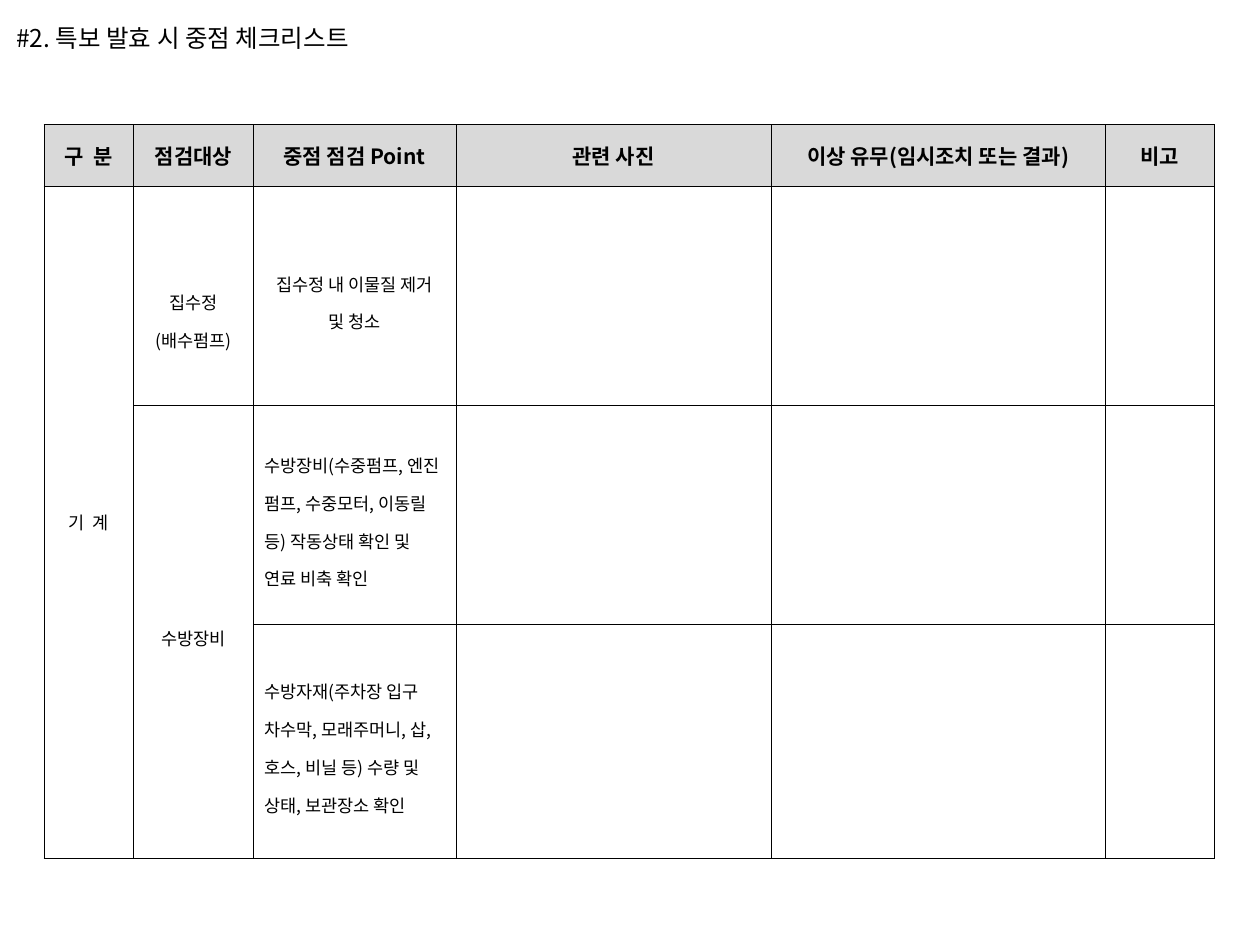
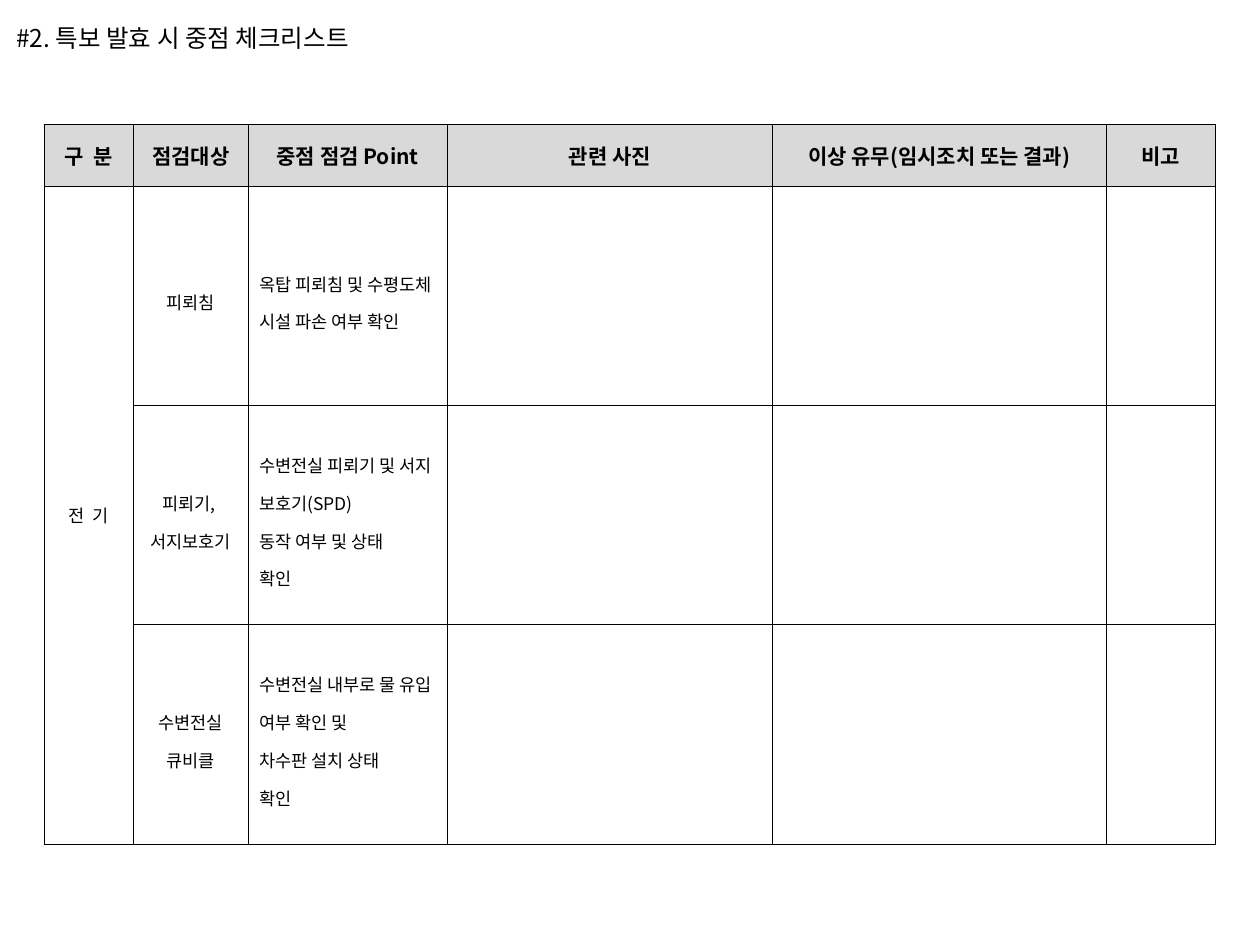
from lxml import etree
from pptx import Presentation
from pptx import util as u
from pptx.dml.color import RGBColor
from pptx.enum import text
from pptx.oxml import ns

FONT = "Noto Sans CJK KR"
BLACK, HEADER_GREY = "000000", "D9D9D9"
LEFT, CENTER = text.PP_ALIGN.LEFT, text.PP_ALIGN.CENTER

TITLE = "#2. 특보 발효 시 중점 체크리스트"
TITLE_BOX = (0.03, 0.13, 5.88, 0.34)
HEADINGS = ("구  분", "점검대상", "중점 점검 Point", "관련 사진",
            "이상 유무(임시조치 또는 결과)", "비고")
TABLE_LEFT, TABLE_TOP = 0.35, 0.99
HEADER_HEIGHT = 0.49
MARGIN_X, MARGIN_Y = 0.09, 0.05
BLANK_LINE = 0.3

# Rows hold category, target and check point; None continues the cell above.
# In a cell, \v breaks a line and \n starts a paragraph.
CHECKLISTS = [
    {
        "columns": (0.71, 0.95, 1.61, 2.5, 2.65, 0.87),
        "heights": (1.74, 1.74, 1.85),
        "rows": [
            ("기  계", "집수정\v(배수펌프)", "집수정 내 이물질 제거\v및 청소"),
            (None, "수방장비",
             "수방장비(수중펌프, 엔진 펌프, 수중모터, 이동릴 등) 작동상태 확인 및 연료 비축 확인"),
            (None, None,
             "수방자재(주차장 입구\v차수막, 모래주머니, 삽, 호스, 비닐 등) 수량 및 상태, 보관장소 확인"),
        ],
        "centered_points": {1},
        "lowered_targets": {1},
    },
    {
        "columns": (0.71, 0.91, 1.58, 2.58, 2.65, 0.87),
        "heights": (1.74, 1.74, 1.74),
        "rows": [
            ("전  기", "피뢰침", "옥탑 피뢰침 및 수평도체  시설 파손 여부 확인"),
            (None, "피뢰기, \v서지보호기",
             "수변전실 피뢰기 및 서지 보호기(SPD)\n동작 여부 및 상태\n확인"),
            (None, "수변전실\v큐비클",
             "수변전실 내부로 물 유입 여부 확인 및\n차수판 설치 상태\n확인"),
        ],
        "centered_points": set(),
        "lowered_targets": set(),
    },
]


def color(value):
    return RGBColor.from_string(value)


def write(frame, words, size, bold=False, align=LEFT, spacing=None):
    frame.text = words
    for para in frame.paragraphs:
        para.alignment = align
        para.line_spacing = spacing
        for span in para.runs:
            span.font.name = FONT
            span.font.size = u.Pt(size)
            span.font.bold = bold
            span.font.color.rgb = color(BLACK)
            east_asian = etree.SubElement(span.font._element, ns.qn("a:ea"))
            east_asian.set("typeface", FONT)


def add_borders(cell):
    properties = cell._tc.get_or_add_tcPr()
    for place, side in enumerate("LRTB"):
        line = etree.Element(ns.qn(f"a:ln{side}"), w=str(u.Pt(0.5)))
        fill = etree.SubElement(line, ns.qn("a:solidFill"))
        etree.SubElement(fill, ns.qn("a:srgbClr"), val=BLACK)
        properties.insert(place, line)


def style_cell(cell, is_header):
    cell.vertical_anchor = text.MSO_ANCHOR.MIDDLE
    cell.margin_left = cell.margin_right = u.Inches(MARGIN_X)
    cell.margin_top = cell.margin_bottom = u.Inches(MARGIN_Y)
    if is_header:
        cell.fill.solid()
        cell.fill.fore_color.rgb = color(HEADER_GREY)
    else:
        cell.fill.background()
    add_borders(cell)


def merge_down(table, rows):
    """Join each cell with the None cells that follow it in its column."""
    for column, entries in enumerate(zip(*rows)):
        starts = [row for row, words in enumerate(entries, 1) if words is not None]
        ends = [start - 1 for start in starts[1:]] + [len(rows)]
        for start, end in zip(starts, ends):
            if end > start:
                table.cell(start, column).merge(table.cell(end, column))


def add_title(page):
    box = page.shapes.add_textbox(*map(u.Inches, TITLE_BOX))
    box.text_frame.word_wrap = True
    box.text_frame.auto_size = text.MSO_AUTO_SIZE.SHAPE_TO_FIT_TEXT
    write(box.text_frame, TITLE, 14)


def add_checklist(page, checklist):
    widths, rows = checklist["columns"], checklist["rows"]
    heights = (HEADER_HEIGHT, *checklist["heights"])
    area = (TABLE_LEFT, TABLE_TOP, sum(widths), sum(heights))
    table = page.shapes.add_table(
        len(heights), len(widths), *map(u.Inches, area)).table
    table.first_row = table.horz_banding = False
    for column, width in zip(table.columns, widths):
        column.width = u.Inches(width)
    for row, height in zip(table.rows, heights):
        row.height = u.Inches(height)
    for row in range(len(heights)):
        for column in range(len(widths)):
            style_cell(table.cell(row, column), row == 0)

    for column, heading in enumerate(HEADINGS):
        write(table.cell(0, column).text_frame, heading, 12, True, CENTER)
    for row, entries in enumerate(rows, 1):
        for column, words in enumerate(entries):
            if words is None:
                continue
            is_point = column == 2 and row not in checklist["centered_points"]
            write(table.cell(row, column).text_frame, words, 10,
                  align=LEFT if is_point else CENTER,
                  spacing=1.5 if column else None)
    for row in checklist["lowered_targets"]:
        table.cell(row, 1).margin_top = u.Inches(MARGIN_Y + BLANK_LINE)
    merge_down(table, rows)


def main():
    deck = Presentation()
    deck.slide_width, deck.slide_height = u.Inches(10), u.Inches(7.5)
    for checklist in CHECKLISTS:
        page = deck.slides.add_slide(deck.slide_layouts[6])
        add_checklist(page, checklist)
        add_title(page)
    deck.save("out.pptx")


if __name__ == "__main__":
    main()
